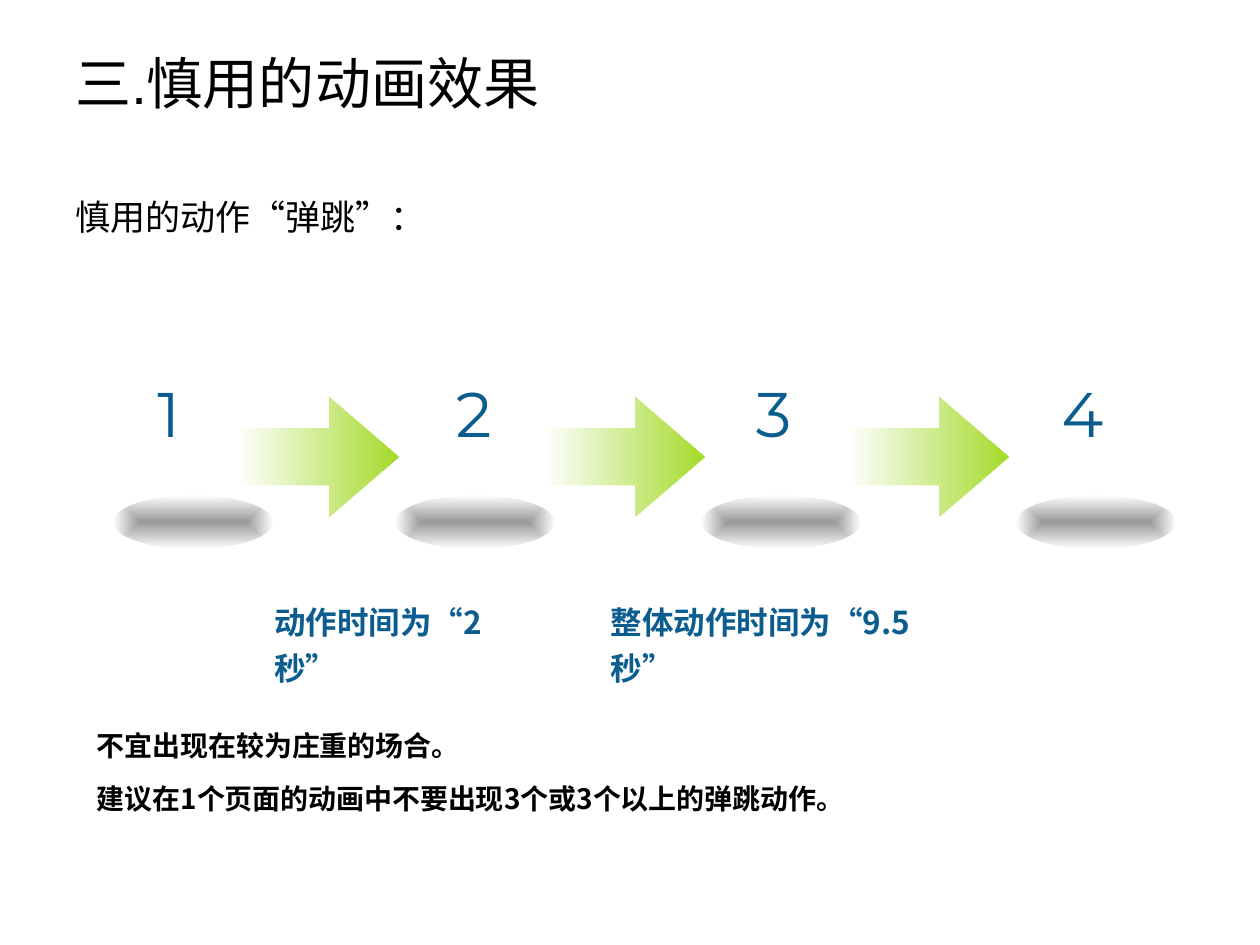
"""Builds a slide on using the bounce animation sparingly."""
from dataclasses import dataclass

from lxml import etree
from pptx import Presentation
from pptx.dml.color import RGBColor
from pptx.enum.shapes import MSO_SHAPE
from pptx.enum.text import MSO_ANCHOR, PP_ALIGN
from pptx.oxml.ns import qn
from pptx.util import Inches, Pt

OVAL, ARROW = MSO_SHAPE.OVAL, MSO_SHAPE.RIGHT_ARROW
TOP, MIDDLE = MSO_ANCHOR.TOP, MSO_ANCHOR.MIDDLE
LEFT, CENTER = PP_ALIGN.LEFT, PP_ALIGN.CENTER


@dataclass(frozen=True)
class Theme:
    ink: str = "000000"
    blue: str = "0B5D8F"
    green: str = "A4DB29"
    plain: str = "Arial"
    digit: str = "Montserrat"
    chinese: str = "Noto Sans CJK SC"
    title: int = 32
    number: int = 36
    heading: int = 20
    timing: int = 18
    advice: int = 16


theme = Theme()
deck = Presentation()
deck.slide_width, deck.slide_height = Inches(10), Inches(7.5)
slide = deck.slides.add_slide(deck.slide_layouts[6])
column, row = deck.slide_width / 100, deck.slide_height / 100


def add_text(words, x, y, width, height, size, face, color,
             bold=False, spacing=1.0, align=LEFT, anchor=TOP):
    box = slide.shapes.add_textbox(
        int(x * column), int(y * row), int(width * column), int(height * row))
    frame = box.text_frame
    frame.word_wrap, frame.vertical_anchor = True, anchor
    paragraph = frame.paragraphs[0]
    paragraph.text = words
    paragraph.alignment, paragraph.line_spacing = align, spacing
    font = paragraph.font
    font.size, font.bold, font.name = Pt(size), bold, face
    font.color.rgb = RGBColor.from_string(color)
    defaults = paragraph._p.pPr.find(qn("a:defRPr"))
    etree.SubElement(defaults, qn("a:ea"), typeface=theme.chinese)


def add_faded(kind, x, y, width, height, color, opacities):
    shape = slide.shapes.add_shape(
        kind, int(x * column), int(y * row), int(width * column), int(height * row))
    shape.shadow.inherit = False
    shape.line.fill.background()
    shape.fill.gradient()
    shape.fill.gradient_angle = 0
    for stop in shape.fill.gradient_stops:
        stop.color.rgb = RGBColor.from_string(color)
    gradient = shape._element.spPr.find(qn("a:gradFill"))
    for tint, opacity in zip(gradient.iter(qn("a:srgbClr")), opacities):
        etree.SubElement(tint, qn("a:alpha"), val=str(opacity * 1000))
    return shape, gradient


for x in (9, 31.4, 55.7, 80.7):
    disc, gradient = add_faded(OVAL, x, 52.4, 12.6, 5.6, theme.ink, (40, 0))
    linear = gradient.find(qn("a:lin"))
    radial = etree.Element(qn("a:path"), path="shape")
    etree.SubElement(radial, qn("a:fillToRect"),
                     {side: "50000" for side in "ltrb"})
    gradient.replace(linear, radial)

add_text("三.慎用的动画效果", 5, 4, 90, 9.33,
         theme.title, theme.plain, theme.ink, anchor=MIDDLE)

for number, x in enumerate((9.4, 33.6, 57.4, 81.9), start=1):
    add_text(str(number), x, 38.93, 8, 16.8,
             theme.number, theme.digit, theme.blue, align=CENTER)

for x in (19, 43.3, 67.4):
    arrow, gradient = add_faded(ARROW, x, 42, 12.6, 12.67, theme.green, (0, 100))
    arrow.adjustments[0], arrow.adjustments[1] = 0.47, 0.58

add_text("慎用的动作“弹跳”：", 5, 20, 29.8, 5.73,
         theme.heading, theme.plain, theme.ink)

for words, x, width in (("动作时间为“2秒”", 20.8, 23.3),
                        ("整体动作时间为“9.5秒”", 47.5, 30)):
    add_text(words, x, 62.4, width, 6.13,
             theme.timing, theme.chinese, theme.blue, bold=True, spacing=1.2)

for words, y in (("不宜出现在较为庄重的场合。", 75.73),
                 ("建议在1个页面的动画中不要出现3个或3个以上的弹跳动作。", 81.33)):
    add_text(words, 6.7, y, 90, 5.33,
             theme.advice, theme.chinese, theme.ink, bold=True, spacing=1.2)

deck.save("out.pptx")
